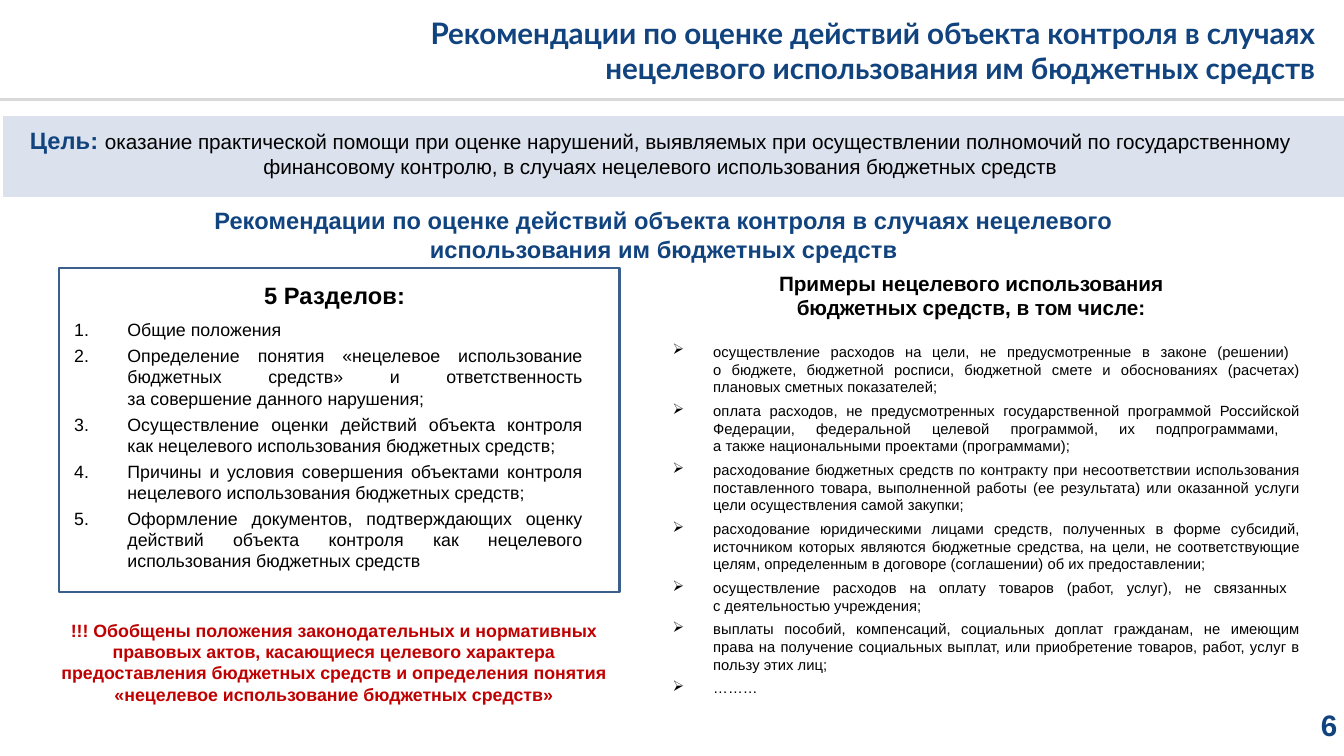
from dataclasses import dataclass
from typing import Optional

from lxml.etree import SubElement
from pptx import Presentation
from pptx.dml.color import RGBColor
from pptx.enum.shapes import MSO_CONNECTOR, MSO_SHAPE
from pptx.enum.text import MSO_ANCHOR, MSO_AUTO_SIZE, PP_ALIGN
from pptx.oxml.ns import qn
from pptx.util import Inches, Pt

WIDTH, HEIGHT = Inches(6.31), Inches(3.55)
NAVY, BLACK, RED = "11437F", "000000", "C00000"


@dataclass(frozen=True)
class Area:
    """Place on the slide, in percent of its width and height."""
    left: float
    top: float
    width: float
    height: float

    def emu(self) -> tuple[int, int, int, int]:
        return (int(WIDTH * self.left / 100), int(HEIGHT * self.top / 100),
                int(WIDTH * self.width / 100), int(HEIGHT * self.height / 100))


@dataclass(frozen=True)
class Style:
    size: float
    color: str = BLACK
    bold: bool = False
    align: PP_ALIGN = PP_ALIGN.CENTER
    font: str = "Arial"


@dataclass(frozen=True)
class ListStyle:
    indent: float
    space_before: float
    bullet_tag: str
    bullet_attribute: str
    bullet_value: str


@dataclass(frozen=True)
class TextBlock:
    area: Area
    style: Style
    paragraphs: tuple[str, ...]
    list_style: Optional[ListStyle] = None
    insets: tuple[float, float] = (0.1, 0.05)


NUMBERED = ListStyle(0.25, 1.5, "a:buAutoNum", "type", "arabicPeriod")
ARROWED = ListStyle(0.19, 2, "a:buChar", "char", "➢")

TITLE = TextBlock(
    Area(29, 1.4, 69.6, 10.7), Style(10, NAVY, True, PP_ALIGN.RIGHT, "Lato"),
    ("Рекомендации по оценке действий объекта контроля в случаях\n"
     "нецелевого использования им бюджетных средств",),
    insets=(0.05, 0.02))

GOAL_LABEL = Style(8, NAVY, True)
GOAL = TextBlock(
    Area(-1.6, 15.2, 101.4, 9.9), Style(7),
    ("оказание практической помощи при оценке нарушений, выявляемых при осуществлении "
     "полномочий по государственному финансовому контролю, в случаях нецелевого "
     "использования бюджетных средств",))

BLOCKS = (
    TextBlock(
        Area(11.6, 25.9, 75.6, 10.4), Style(8, NAVY, True),
        ("Рекомендации по оценке действий объекта контроля в случаях нецелевого "
         "использования им бюджетных средств",)),
    TextBlock(Area(12.4, 35.8, 25, 6.8), Style(8, bold=True), ("5 Разделов:",)),
    TextBlock(
        Area(3.96, 40.85, 40.9, 37.2), Style(6, align=PP_ALIGN.JUSTIFY),
        ("Общие положения",
         "Определение понятия «нецелевое использование бюджетных средств» и "
         "ответственность\nза совершение данного нарушения;",
         "Осуществление оценки действий объекта контроля как нецелевого использования "
         "бюджетных средств;",
         "Причины и условия совершения объектами контроля нецелевого использования "
         "бюджетных средств;",
         "Оформление документов, подтверждающих оценку действий объекта контроля как "
         "нецелевого использования бюджетных средств"),
        NUMBERED),
    TextBlock(
        Area(2.4, 80.55, 44.85, 14.1), Style(6, RED, True),
        ("!!! Обобщены положения законодательных и нормативных правовых актов, касающиеся "
         "целевого характера предоставления бюджетных средств и определения понятия "
         "«нецелевое использование бюджетных средств»",)),
    TextBlock(
        Area(48.5, 34.4, 47.5, 9.6), Style(7, bold=True),
        ("Примеры нецелевого использования\nбюджетных средств, в том числе:",)),
    TextBlock(
        Area(48.5, 43.95, 49.9, 50.1), Style(5, align=PP_ALIGN.JUSTIFY),
        ("осуществление расходов на цели, не предусмотренные в законе (решении) \n"
         "о бюджете, бюджетной росписи, бюджетной смете и обоснованиях (расчетах) "
         "плановых сметных показателей;",
         "оплата расходов, не предусмотренных государственной программой Российской "
         "Федерации, федеральной целевой программой, их подпрограммами, \n"
         "а также национальными проектами (программами);",
         "расходование бюджетных средств по контракту при несоответствии использования "
         "поставленного товара, выполненной работы (ее результата) или оказанной услуги "
         "цели осуществления самой закупки;",
         "расходование юридическими лицами средств, полученных в форме субсидий, "
         "источником которых являются бюджетные средства, на цели, не соответствующие "
         "целям, определенным в договоре (соглашении) об их предоставлении;",
         "осуществление расходов на оплату товаров (работ, услуг), не связанных \n"
         "с деятельностью учреждения;",
         "выплаты пособий, компенсаций, социальных доплат гражданам, не имеющим права "
         "на получение социальных выплат, или приобретение товаров, работ, услуг в пользу "
         "этих лиц;",
         "………"),
        ARROWED),
    TextBlock(Area(95.9, 93.5, 3.6, 5.4), Style(10, NAVY, True, PP_ALIGN.RIGHT), ("6",),
              insets=(0, 0)),
)


def rgb(color: str) -> RGBColor:
    return RGBColor.from_string(color)


def format_font(font, style: Style) -> None:
    font.name, font.size, font.bold = style.font, Pt(style.size), style.bold
    font.color.rgb = rgb(style.color)


def add_bullet(paragraph, list_style: ListStyle) -> None:
    properties = paragraph._p.get_or_add_pPr()
    indent = Inches(list_style.indent)
    properties.set("marL", str(indent))
    properties.set("indent", str(-indent))
    bullet = SubElement(properties, qn(list_style.bullet_tag))
    bullet.set(list_style.bullet_attribute, list_style.bullet_value)


def fill_text(shape, block: TextBlock) -> None:
    shape.left, shape.top, shape.width, shape.height = block.area.emu()
    frame = shape.text_frame
    frame.word_wrap = True
    frame.auto_size = MSO_AUTO_SIZE.NONE
    frame.vertical_anchor = MSO_ANCHOR.TOP
    frame.margin_left = frame.margin_right = Inches(block.insets[0])
    frame.margin_top = frame.margin_bottom = Inches(block.insets[1])
    for index, text in enumerate(block.paragraphs):
        paragraph = frame.add_paragraph() if index else frame.paragraphs[0]
        paragraph.text = text.replace("\n", "\v")
        paragraph.alignment = block.style.align
        if block.list_style:
            add_bullet(paragraph, block.list_style)
            if index:
                paragraph.space_before = Pt(block.list_style.space_before)
        format_font(paragraph.font, block.style)


def add_text(slide, block: TextBlock) -> None:
    fill_text(slide.shapes.add_textbox(*block.area.emu()), block)


def add_goal(slide) -> None:
    box = slide.shapes.add_textbox(*GOAL.area.emu())
    fill_text(box, GOAL)
    paragraph = box.text_frame.paragraphs[0]
    text = paragraph.runs[0].text
    paragraph.runs[0].text = "Цель: "
    format_font(paragraph.runs[0].font, GOAL_LABEL)
    description = paragraph.add_run()
    description.text = text
    format_font(description.font, GOAL.style)


def add_rectangle(slide, area: Area, line: str, line_width: float,
                  fill: Optional[str] = None, opacity: int = 100) -> None:
    shape = slide.shapes.add_shape(MSO_SHAPE.RECTANGLE, *area.emu())
    shape.shadow.inherit = False
    shape.line.color.rgb, shape.line.width = rgb(line), Pt(line_width)
    if fill is None:
        shape.fill.background()
        return
    shape.fill.solid()
    shape.fill.fore_color.rgb = rgb(fill)
    color = shape._element.spPr.find(qn("a:solidFill"))[0]
    SubElement(color, qn("a:alpha")).set("val", str(opacity * 1000))


def add_rule(slide, top: float, color: str) -> None:
    y = int(HEIGHT * top / 100)
    rule = slide.shapes.add_connector(MSO_CONNECTOR.STRAIGHT, 0, y, WIDTH, y)
    rule.line.color.rgb, rule.line.width = rgb(color), Pt(1)
    SubElement(rule._element.spPr, qn("a:effectLst"))


def main() -> None:
    presentation = Presentation()
    presentation.slide_width, presentation.slide_height = WIDTH, HEIGHT
    slide = presentation.slides.add_slide(presentation.slide_layouts[5])

    # Heading
    fill_text(slide.shapes.title, TITLE)
    add_rule(slide, 13.2, "D9D9D9")

    # Goal band
    add_rectangle(slide, Area(0, 14.9, 100.2, 11.6), "FFFFFF", 2, "C2CDE1", 59)
    add_goal(slide)

    # Sections, examples and page number
    add_rectangle(slide, Area(4.4, 35.5, 41.7, 42.8), "3A5F8C", 0.75)
    for block in BLOCKS:
        add_text(slide, block)

    presentation.save("out.pptx")


if __name__ == "__main__":
    main()
